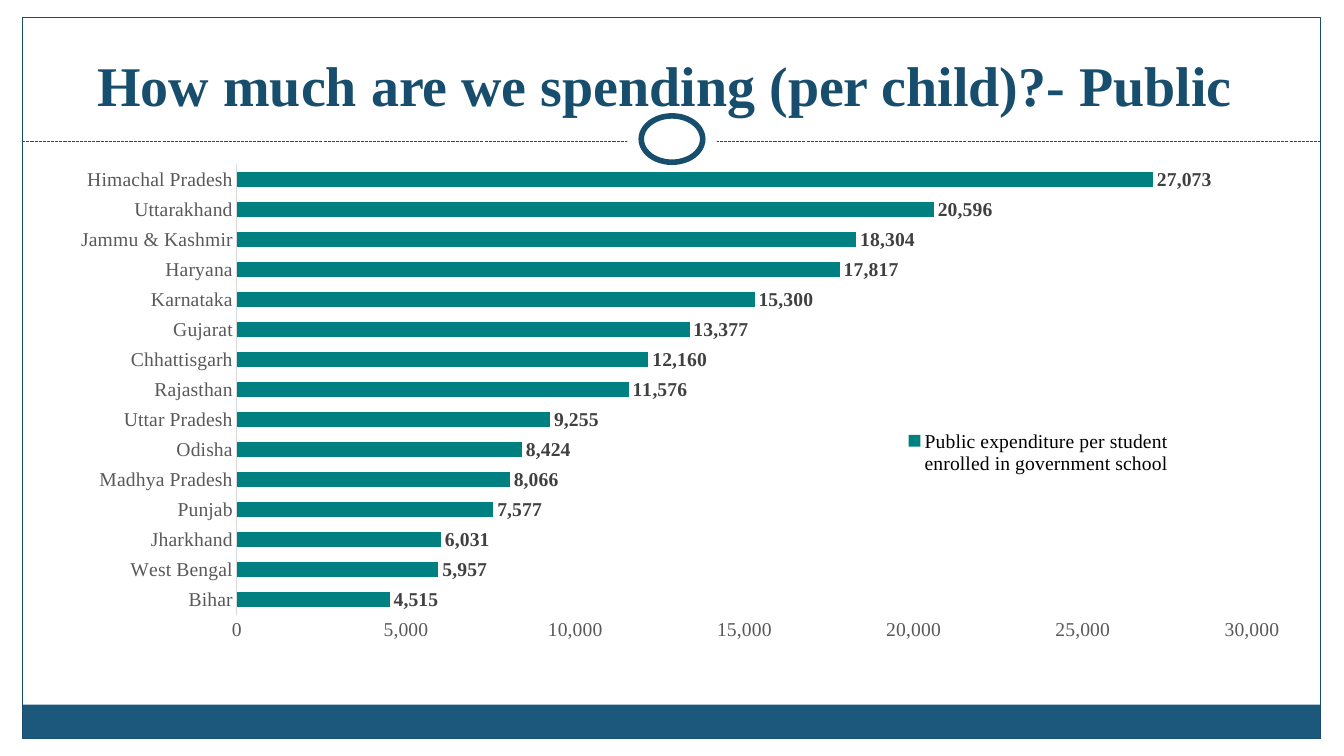
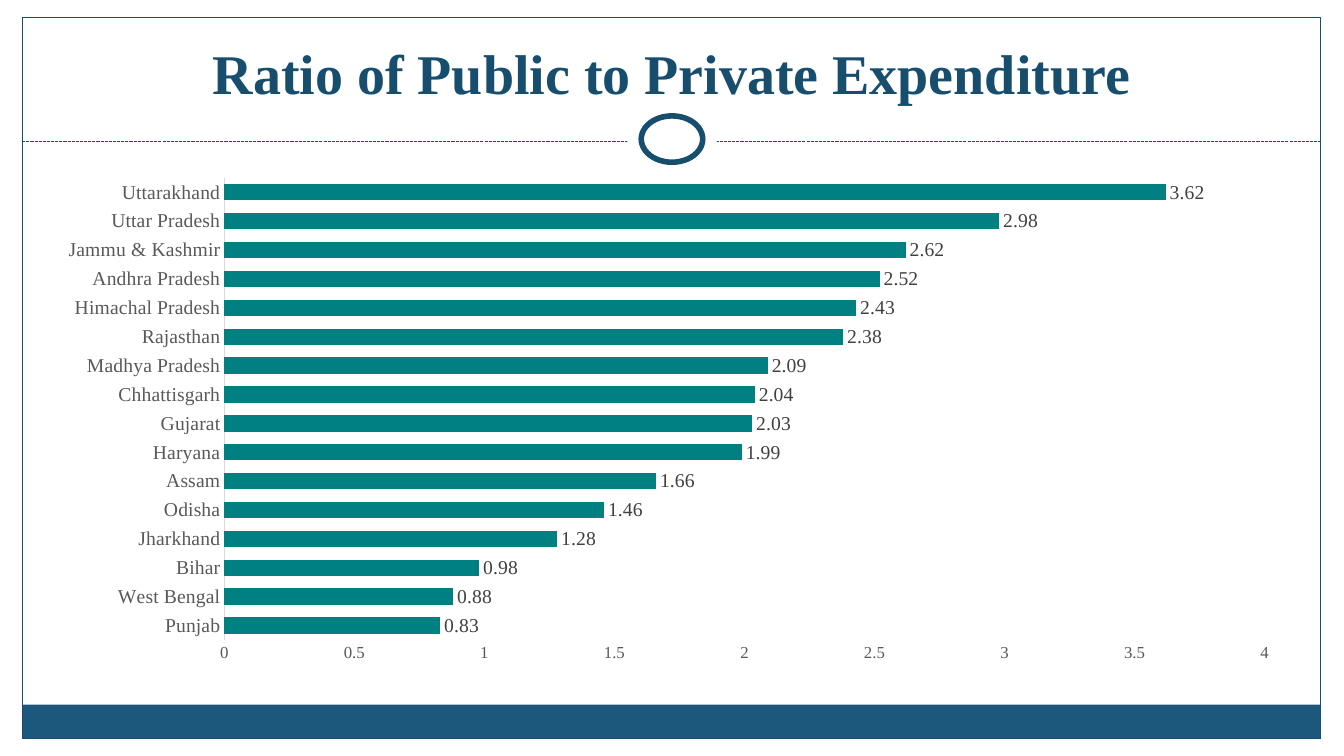
"""Build two bar chart slides on public spending per child by state."""
import lxml.etree
import pptx
import pptx.chart.data
import pptx.dml.color
import pptx.enum.chart
import pptx.enum.dml
import pptx.enum.shapes
import pptx.enum.text
import pptx.oxml.ns
import pptx.util

Inches = pptx.util.Inches
Pt = pptx.util.Pt
RGBColor = pptx.dml.color.RGBColor
qn = pptx.oxml.ns.qn
SHAPE = pptx.enum.shapes.MSO_SHAPE

NAVY = RGBColor(0x18, 0x4E, 0x6D)
BAND = RGBColor(0x1B, 0x58, 0x7C)
TEAL = RGBColor(0x00, 0x80, 0x80)
WHITE = RGBColor(0xFF, 0xFF, 0xFF)
BLACK = RGBColor(0x00, 0x00, 0x00)
DARK = RGBColor(0x40, 0x40, 0x40)
GREY = RGBColor(0x59, 0x59, 0x59)
PALE = RGBColor(0xD9, 0xD9, 0xD9)
FACE = "Times New Roman"
LEFT, WIDTH, FOOT = 0.44, 12.4, 6.67

DECOR = [
    (SHAPE.RECTANGLE, (0.22, 6.99, 12.88, 0.34), BAND, None),
    (SHAPE.RECTANGLE, (0.22, 0.17, 12.88, 7.16), None, 0.75),
    (None, (0.22, 1.4, 13.1, 1.4), None, 0.75),
    (SHAPE.OVAL, (6.22, 1.05, 0.89, 0.67), WHITE, None),
    (SHAPE.OVAL, (6.36, 1.15, 0.61, 0.46), WHITE, 4),
]

SLIDES = [
    {
        "title": "How much are we spending (per child)?- Public ",
        "tall": 0.95, "top": 1.49, "gap": 97, "size": 14, "bold": True,
        "max": 30000, "unit": 5000, "format": "#,##0",
        "plot": (0.154, 0.027, 0.812, 0.863),
        "legend": (0.68, 0.53, 0.23, 0.1),
        "name": "Public expenditure per student enrolled in government school",
        "data": [
            ("Bihar", 4515), ("West Bengal", 5957), ("Jharkhand", 6031),
            ("Punjab", 7577), ("Madhya Pradesh", 8066), ("Odisha", 8424),
            ("Uttar Pradesh", 9255), ("Rajasthan", 11576),
            ("Chhattisgarh", 12160), ("Gujarat", 13377),
            ("Karnataka", 15300), ("Haryana", 17817),
            ("Jammu & Kashmir", 18304), ("Uttarakhand", 20596),
            ("Himachal Pradesh", 27073),
        ],
    },
    {
        "title": "Ratio of Public to Private Expenditure",
        "tall": 0.83, "top": 1.67, "gap": 76, "size": 12, "bold": False,
        "max": 4, "unit": 0.5, "format": "General",
        "plot": (0.144, 0.019, 0.832, 0.917),
        "legend": None,
        "name": "Series 1",
        "data": [
            ("Punjab", 0.83), ("West Bengal", 0.88), ("Bihar", 0.98),
            ("Jharkhand", 1.28), ("Odisha", 1.46), ("Assam", 1.66),
            ("Haryana", 1.99), ("Gujarat", 2.03), ("Chhattisgarh", 2.04),
            ("Madhya Pradesh", 2.09), ("Rajasthan", 2.38),
            ("Himachal Pradesh", 2.43), ("Andhra Pradesh", 2.52),
            ("Jammu & Kashmir", 2.62), ("Uttar Pradesh", 2.98),
            ("Uttarakhand", 3.62),
        ],
    },
]


def style(font, size, color, bold=False):
    font.name, font.size, font.bold = FACE, Pt(size), bold
    font.color.rgb = color


def add_decor(slide, layout):
    for index, (kind, box, fill, line) in enumerate(DECOR):
        spots = [Inches(n) for n in box]
        if kind is None:
            shape = slide.shapes.add_connector(
                pptx.enum.shapes.MSO_CONNECTOR.STRAIGHT, *spots)
            shape.line.dash_style = pptx.enum.dml.MSO_LINE.SQUARE_DOT
            lxml.etree.SubElement(
                shape.element.find(qn("p:spPr")), qn("a:effectLst"))
        else:
            shape = slide.shapes.add_shape(kind, *spots)
            shape.shadow.inherit = False
            if fill is None:
                shape.fill.background()
            else:
                shape.fill.solid()
                shape.fill.fore_color.rgb = fill
        if line:
            shape.line.color.rgb = NAVY
            shape.line.width = Pt(line)
        else:
            shape.line.fill.background()
        shape.element.xpath(".//p:cNvPr")[0].set("id", str(20 + index))
        layout.shapes.element.append(shape.element)


def add_title(slide, text, tall):
    title = slide.shapes.title
    title.left, title.top = Inches(LEFT), Inches(0.25)
    title.width, title.height = Inches(12.44), Inches(tall)
    frame = title.text_frame
    frame.text = text
    frame.auto_size = pptx.enum.text.MSO_AUTO_SIZE.NONE
    frame.vertical_anchor = pptx.enum.text.MSO_ANCHOR.BOTTOM
    frame.margin_bottom = Inches(0.03)
    line = frame.paragraphs[0]
    line.alignment = pptx.enum.text.PP_ALIGN.CENTER
    style(line.runs[0].font, 40, NAVY, True)


def set_layout(part, index, box, inner=False):
    old = part.find(qn("c:layout"))
    if old is not None:
        part.remove(old)
    layout = lxml.etree.Element(qn("c:layout"))
    manual = lxml.etree.SubElement(layout, qn("c:manualLayout"))
    pairs = [("layoutTarget", "inner")] if inner else []
    pairs += [("xMode", "edge"), ("yMode", "edge"), *zip("xywh", box)]
    for tag, value in pairs:
        lxml.etree.SubElement(manual, qn("c:" + tag)).set("val", str(value))
    part.insert(index, layout)


def add_bars(slide, item):
    data = pptx.chart.data.CategoryChartData(number_format=item["format"])
    names, values = zip(*item["data"])
    data.categories = names
    data.add_series(item["name"], values)
    top = item["top"]
    chart = slide.shapes.add_chart(
        pptx.enum.chart.XL_CHART_TYPE.BAR_CLUSTERED, Inches(LEFT), Inches(top),
        Inches(WIDTH), Inches(FOOT - top), data).chart
    style(chart.font, 14, BLACK)
    chart.has_title = False
    set_layout(chart.plots[0]._element.getparent(), 0, item["plot"], True)

    plot = chart.plots[0]
    plot.gap_width = item["gap"]
    plot.vary_by_categories = False
    bars = plot.series[0]
    bars.format.fill.solid()
    bars.format.fill.fore_color.rgb = TEAL
    labels = bars.data_labels
    labels.show_value = True
    labels.position = pptx.enum.chart.XL_LABEL_POSITION.OUTSIDE_END
    labels.number_format = item["format"]
    labels.number_format_is_linked = False
    style(labels.font, 14, DARK, item["bold"])

    states, scale = chart.category_axis, chart.value_axis
    for axis, size in ((states, 14), (scale, item["size"])):
        axis.has_major_gridlines = False
        axis.major_tick_mark = pptx.enum.chart.XL_TICK_MARK.NONE
        axis.minor_tick_mark = pptx.enum.chart.XL_TICK_MARK.NONE
        style(axis.tick_labels.font, size, GREY)
    states.format.line.color.rgb = PALE
    states.format.line.width = Pt(0.75)
    scale.format.line.fill.background()
    scale.minimum_scale, scale.maximum_scale = 0, item["max"]
    scale.major_unit = item["unit"]
    scale.tick_labels.number_format = item["format"]
    scale.tick_labels.number_format_is_linked = False

    chart.has_legend = item["legend"] is not None
    if chart.has_legend:
        legend = chart.legend
        legend.position = pptx.enum.chart.XL_LEGEND_POSITION.RIGHT
        legend.include_in_layout = False
        style(legend.font, 14, BLACK)
        set_layout(legend._element, 1, item["legend"])


def main():
    deck = pptx.Presentation()
    deck.slide_width, deck.slide_height = Inches(13.33), Inches(7.5)
    layout = deck.slide_layouts[5]
    for index, item in enumerate(SLIDES):
        slide = deck.slides.add_slide(layout)
        if index == 0:
            add_decor(slide, layout)
        add_title(slide, item["title"], item["tall"])
        add_bars(slide, item)
    deck.save("out.pptx")


if __name__ == "__main__":
    main()
